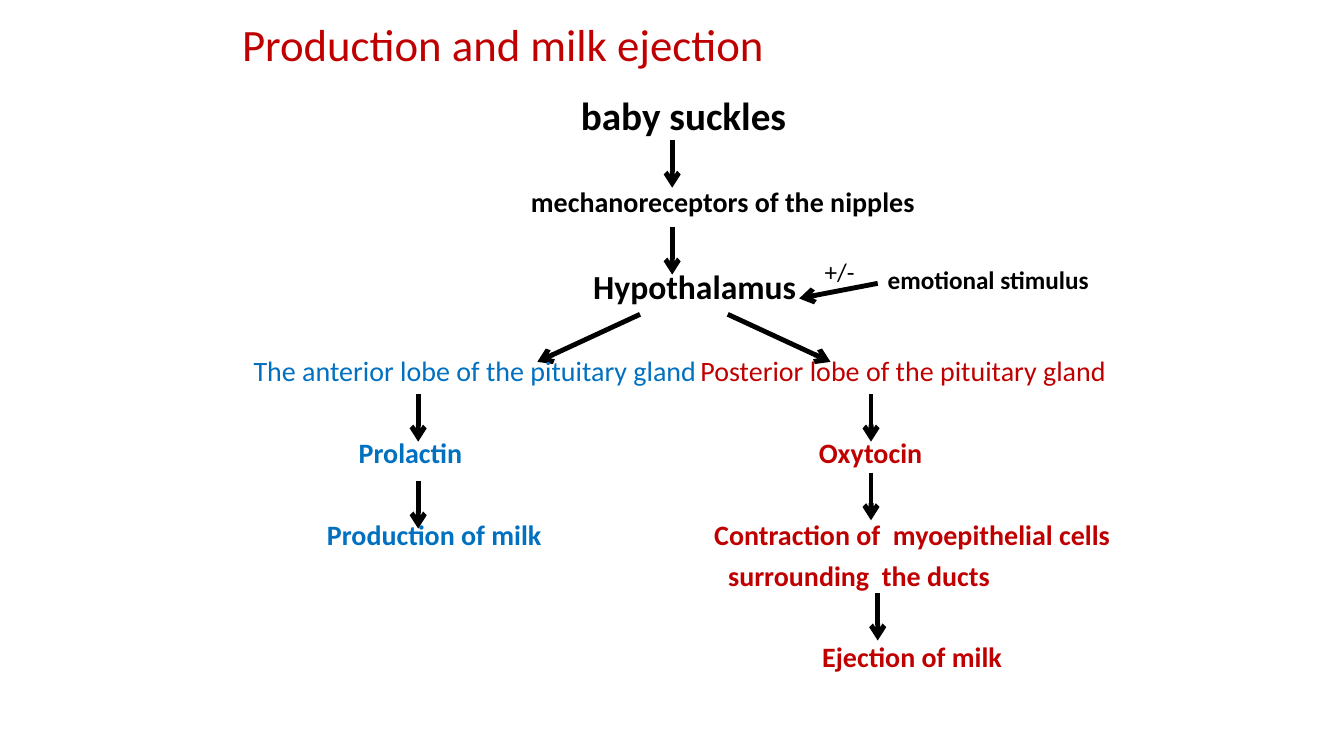
from lxml import etree
from pptx import Presentation
from pptx.dml.color import RGBColor
from pptx.enum.shapes import MSO_CONNECTOR
from pptx.enum.text import MSO_ANCHOR
from pptx.oxml.ns import qn
from pptx.util import Cm, Pt

BLACK = RGBColor(0x00, 0x00, 0x00)
RED = RGBColor(0xC0, 0x00, 0x00)
BLUE = RGBColor(0x00, 0x70, 0xC0)
STRAIGHT = MSO_CONNECTOR.STRAIGHT
MIDDLE = MSO_ANCHOR.MIDDLE

FONT = "Calibri"
ARROW_LENGTH = 1.2
ROW_PITCH = 1.03


def add_label(page, left, middle, width, text, size, colour, bold=True):
    height = size * 0.05
    box = page.shapes.add_textbox(
        Cm(left), Cm(middle - height / 2), Cm(width), Cm(height))
    frame = box.text_frame
    frame_format = {
        "word_wrap": True, "vertical_anchor": MIDDLE,
        "margin_left": 0, "margin_right": 0, "margin_top": 0, "margin_bottom": 0,
    }
    for name, value in frame_format.items():
        setattr(frame, name, value)
    span = frame.paragraphs[0].add_run()
    span.text = text
    for name, value in {"name": FONT, "size": Pt(size), "bold": bold}.items():
        setattr(span.font, name, value)
    span.font.color.rgb = colour


def add_arrow(page, start, end):
    arrow = page.shapes.add_connector(STRAIGHT, *(Cm(n) for n in (*start, *end)))
    arrow.line.width = Pt(3.5)
    arrow.line.color.rgb = BLACK
    outline = arrow.line._get_or_add_ln()
    etree.SubElement(outline, qn("a:tailEnd"), type="arrow")
    etree.SubElement(arrow._element.spPr, qn("a:effectLst"))


def add_down_arrow(page, x, top):
    add_arrow(page, (x, top), (x, top + ARROW_LENGTH))


def draw_title(page, left, middle):
    add_label(page, left, middle, 22, "Production and milk ejection", 32, RED, False)


def draw_reflex(page, left, top):
    labels = [
        (1.26, 0, 6, "baby suckles", 28),
        (0, 2.19, 10.5, "mechanoreceptors of the nipples", 20),
        (1.57, 4.33, 6, "Hypothalamus", 24),
    ]
    for dx, dy, width, text, size in labels:
        add_label(page, left + dx, top + dy, width, text, size, BLACK)
    for dy in (0.64, 2.83):
        add_down_arrow(page, left + 3.56, top + dy)
    fork = top + 5.03
    for start, end in ((2.75, 0.16), (4.96, 7.55)):
        add_arrow(page, (left + start, fork), (left + end, fork + ARROW_LENGTH))


def draw_stimulus(page, left, top):
    add_label(page, left, top, 1.2, "+/-", 18, BLACK, False)
    add_label(page, left + 1.59, top + 0.21, 6, "emotional stimulus", 18, BLACK)
    add_arrow(page, (left + 1.34, top + 0.31), (left - 0.64, top + 0.69))


def draw_branch(page, left, top, colour, lobe, steps, arrows):
    add_label(page, left, top, 11.26, lobe, 20, colour, False)
    for dx, row, text in steps:
        add_label(page, left + dx, top + row * ROW_PITCH, 10.5, text, 20, colour)
    for dx, dy in arrows:
        add_down_arrow(page, left + dx, top + dy)


def main():
    deck = Presentation()
    deck.slide_width, deck.slide_height = Cm(33.87), Cm(19.05)
    page = deck.slides.add_slide(deck.slide_layouts[6])
    draw_title(page, 6.1, 1.1)
    draw_reflex(page, 13.38, 2.89)
    draw_stimulus(page, 20.78, 6.83)
    draw_branch(
        page, 6.39, 9.34, BLUE, "The anterior lobe of the pituitary gland",
        [(2.65, 2, "Prolactin"), (1.85, 4, "Production of milk")],
        [(4.15, 0.59), (4.15, 2.78)])
    draw_branch(
        page, 17.65, 9.34, RED, "Posterior lobe of the pituitary gland",
        [(2.99, 2, "Oxytocin"),
         (0.35, 4, "Contraction of  myoepithelial cells"),
         (0.7, 5, "surrounding  the ducts"),
         (3.07, 7, "Ejection of milk")],
        [(4.3, 0.59), (4.3, 2.57), (4.47, 5.6)])
    deck.save("out.pptx")


if __name__ == "__main__":
    main()
